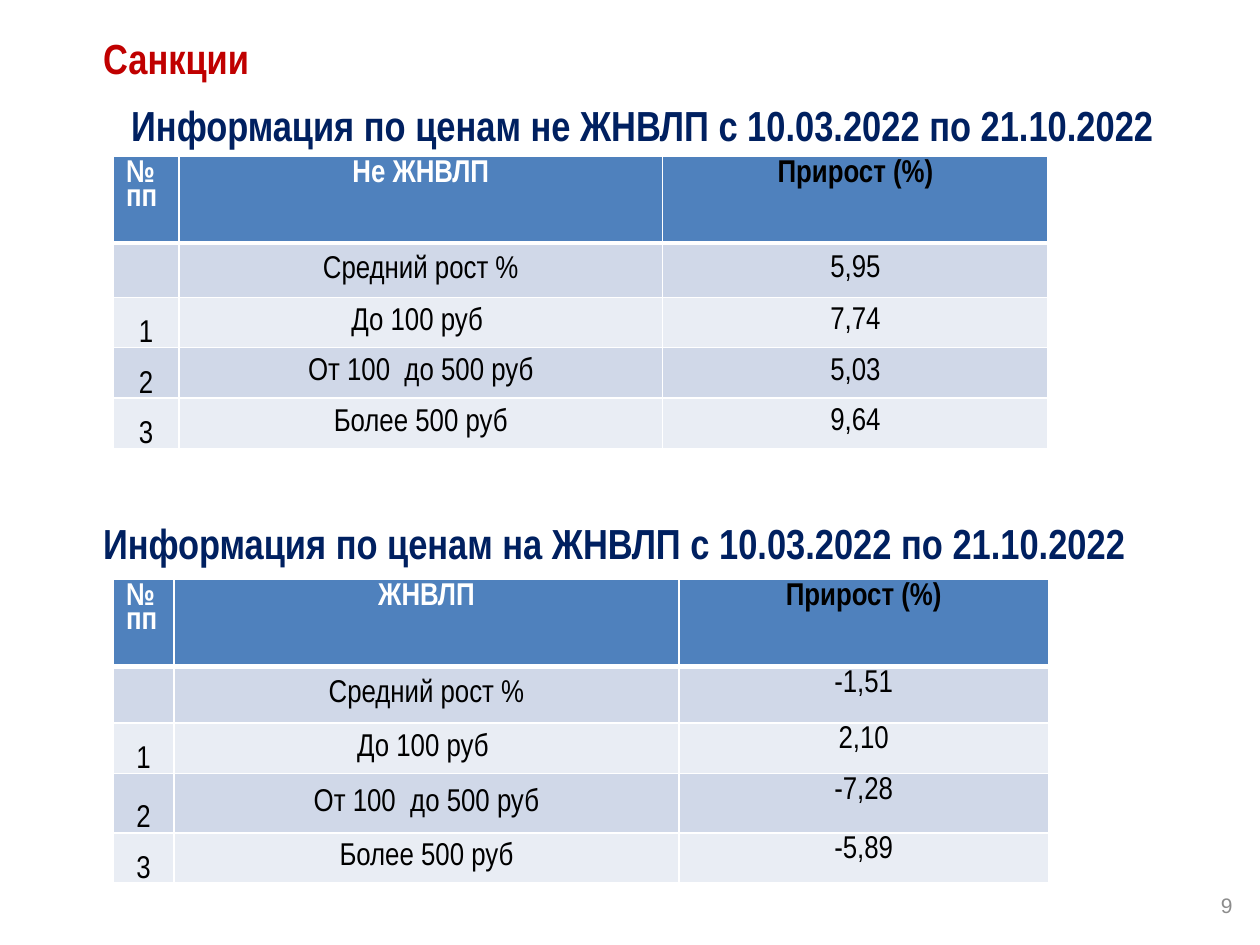
from lxml.etree import SubElement
from pptx import Presentation
from pptx.dml.color import RGBColor
from pptx.enum.text import MSO_ANCHOR, PP_ALIGN
from pptx.oxml.ns import qn
from pptx.util import Inches, Pt

INK = {"white": "FFFFFF", "black": "000000", "navy": "002060", "red": "C00000",
       "grey": "8C8C8C", "head": "4F81BD", "odd": "D0D8E8", "even": "E9EDF4"}
LEFT, MID, RIGHT = PP_ALIGN.LEFT, PP_ALIGN.CENTER, PP_ALIGN.RIGHT
TOP, HALF, LOW = MSO_ANCHOR.TOP, MSO_ANCHOR.MIDDLE, MSO_ANCHOR.BOTTOM

deck = Presentation()
deck.slide_width, deck.slide_height = Inches(10), Inches(7.5)
slide = deck.slides.add_slide(deck.slide_layouts[6])
unit = deck.slide_width // 10  # ten columns across, square rows


def write(para, text, size, ink, bold, align, face="Arial Narrow"):
    para.text = text
    para.alignment = align
    font = para.font
    font.name, font.size, font.bold = face, Pt(size), bold
    font.color.rgb = RGBColor.from_string(INK[ink])


def edge(cell, side, width):
    """Draw one white border; call before the cell gets its fill."""
    line = SubElement(cell._tc.get_or_add_tcPr(), qn(f"a:ln{side}"), w=str(Pt(width)))
    fill = SubElement(line, qn("a:solidFill"))
    SubElement(fill, qn("a:srgbClr"), val=INK["white"])


span = "с 10.03.2022 по 21.10.2022"
labels = [
    ((0.72, 0.21, 1.63, 0.49), "Санкции", 24, "red", True, LEFT, "Arial Narrow", TOP),
    ((0.9, 0.74, 8.47, 0.49), f"Информация по ценам не ЖНВЛП {span} ", 24, "navy", True, MID,
     "Arial Narrow", TOP),
    ((0.72, 4.06, 9, 0.5), f"Информация по ценам на ЖНВЛП {span}", 24, "navy", True, LEFT,
     "Arial Narrow", TOP),
    ((9.47, 6.98, 0.41, 0.4), "9", 12, "grey", False, RIGHT, "Arial", HALF),
]
for place, text, size, ink, bold, align, face, anchor in labels:
    frame = slide.shapes.add_textbox(*[int(n * unit) for n in place]).text_frame
    frame.word_wrap = True
    frame.vertical_anchor = anchor
    write(frame.paragraphs[0], text, size, ink, bold, align, face)

groups = [("", "Средний рост %"), ("1", "До 100 руб "),
          ("2", "От 100  до 500 руб"), ("3", "Более 500 руб")]
tables = [
    (1.24, "Не ЖНВЛП", (0.52, 3.84, 3.06), (0.69, 0.43, 0.4, 0.4, 0.4), HALF,
     ["5,95", "7,74", "5,03", "9,64"]),
    (4.6, "ЖНВЛП", (0.48, 4.01, 2.93), (0.69, 0.45, 0.4, 0.47, 0.4), TOP,
     ["-1,51", "2,10", "-7,28", "-5,89"]),
]
for top, name, widths, heights, anchor, values in tables:
    rows = [("№пп", name, "Прирост (%)")]
    rows += [(*group, value) for group, value in zip(groups, values)]
    size = (sum(widths), sum(heights))
    grid = slide.shapes.add_table(len(rows), len(widths),
                                  *[int(n * unit) for n in (0.9, top, *size)]).table
    for col, width in zip(grid.columns, widths):
        col.width = int(width * unit)
    for row, height in zip(grid.rows, heights):
        row.height = int(height * unit)

    for r, texts in enumerate(rows):
        head = r == 0
        for c, text in enumerate(texts):
            cell = grid.cell(r, c)
            for side in "LRTB":
                thick = (r, side) in [(0, "B"), (1, "T")]
                edge(cell, side, 3 if thick else 1)
            cell.fill.solid()
            shade = "head" if head else "odd" if r % 2 else "even"
            cell.fill.fore_color.rgb = RGBColor.from_string(INK[shade])
            cell.vertical_anchor = TOP if head else (LOW, HALF, anchor)[c]
            if not head and c < 2:
                cell.margin_left = cell.margin_right = cell.margin_top = Inches(0.01)
                cell.margin_bottom = 0
            para = cell.text_frame.paragraphs[0]
            para.line_spacing = 0.82
            write(para, text, 18, "white" if head and c < 2 else "black", head,
                  LEFT if head and c == 0 else MID)

deck.save("out.pptx")
